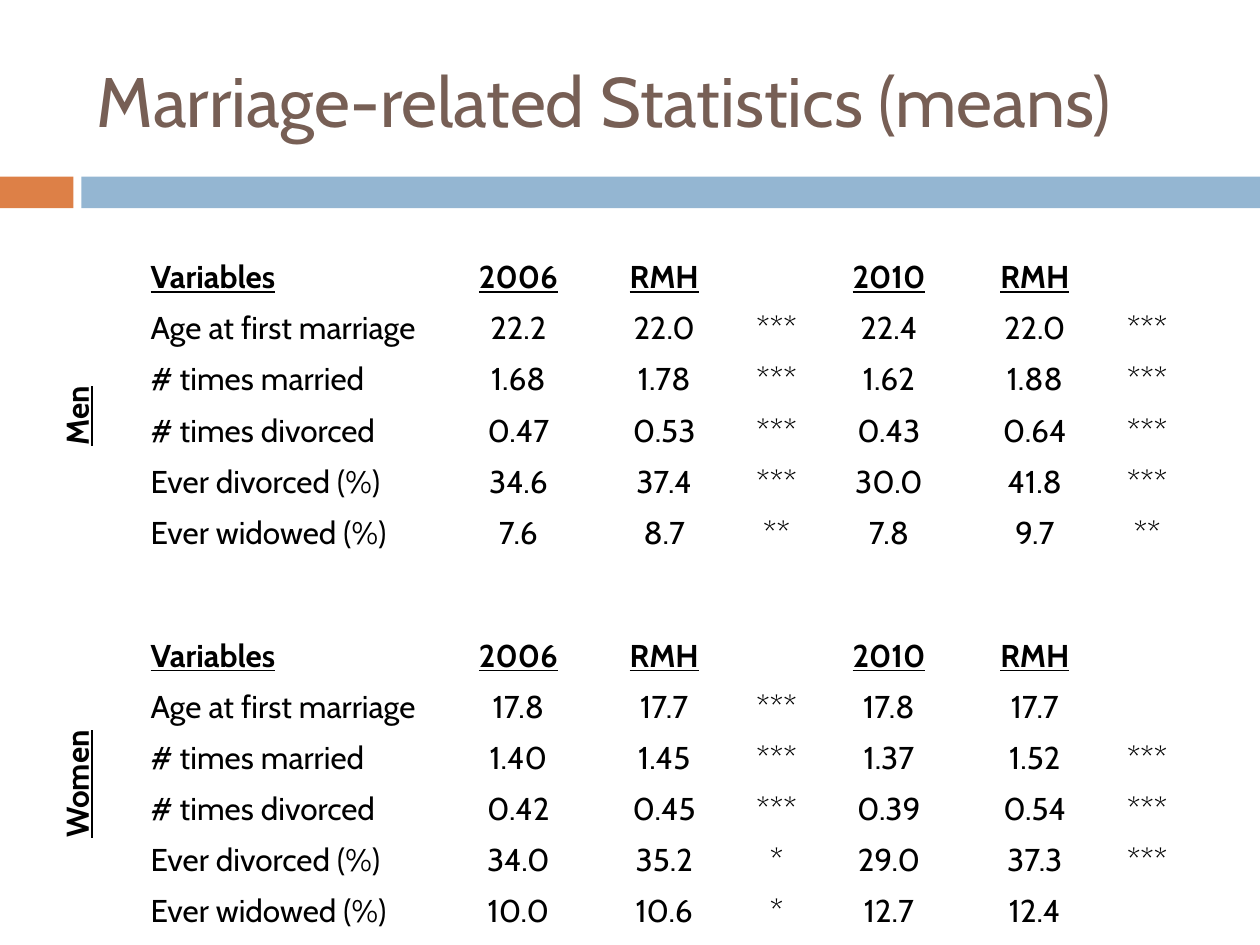
from pptx import Presentation
from pptx.dml.color import RGBColor
from pptx.enum.shapes import MSO_SHAPE
from pptx.enum.text import MSO_ANCHOR, PP_ALIGN
from pptx.util import Cm, Pt

FONT = "Cabin"
HEADER = ["Variables", "2006", "RMH", "", "2010", "RMH", ""]
LABELS = ["Age at first marriage", "# times married", "# times divorced",
          "Ever divorced (%)", "Ever widowed (%)"]
GROUPS = {
    "Men": [
        ["22.2", "22.0", "***", "22.4", "22.0", "***"],
        ["1.68", "1.78", "***", "1.62", "1.88", "***"],
        ["0.47", "0.53", "***", "0.43", "0.64", "***"],
        ["34.6", "37.4", "***", "30.0", "41.8", "***"],
        ["7.6", "8.7", "**", "7.8", "9.7", "**"],
    ],
    "Women": [
        ["17.8", "17.7", "***", "17.8", "17.7", ""],
        ["1.40", "1.45", "***", "1.37", "1.52", "***"],
        ["0.42", "0.45", "***", "0.39", "0.54", "***"],
        ["34.0", "35.2", "*", "29.0", "37.3", "***"],
        ["10.0", "10.6", "*", "12.7", "12.4", ""],
    ],
}
COL_WIDTHS = [1.73, 6.2] + [2.94, 2.94, 1.59] * 2
ROW_HEIGHT = 1.03
BLOCK = len(LABELS) + 1


def rgb(color):
    """Turn a hex string into a colour."""
    return RGBColor.from_string(color)


def style(p, size, color, align=PP_ALIGN.LEFT, strong=False):
    """Set the font and alignment of a paragraph."""
    p.alignment = align
    p.font.name, p.font.size = FONT, Pt(size)
    p.font.color.rgb = rgb(color)
    p.font.bold = p.font.underline = strong


def add_title(s, text, x, y, w, h):
    """Place the slide title, centred vertically in its box."""
    tf = s.shapes.add_textbox(Cm(x), Cm(y), Cm(w), Cm(h)).text_frame
    tf.word_wrap = True
    tf.vertical_anchor = MSO_ANCHOR.MIDDLE
    tf.text = text
    style(tf.paragraphs[0], 40, "775F55")


def add_band(s, x, y, w, h):
    """Draw the two-coloured band with a short block at its left."""
    short, gap = 1.48, 0.16
    start = short + gap
    for dx, width, color in [(0, short, "DD8047"), (start, w - start, "94B6D2")]:
        sp = s.shapes.add_shape(MSO_SHAPE.RECTANGLE, Cm(x + dx), Cm(y), Cm(width), Cm(h))
        sp.shadow.inherit = False
        sp.fill.solid()
        sp.fill.fore_color.rgb = rgb(color)
        sp.line.fill.background()


def fill_cell(cell, text, align=PP_ALIGN.CENTER, strong=False):
    """Write one table cell."""
    cell.text = text
    style(cell.text_frame.paragraphs[0], 18, "000000", align, strong)


def fill_group(table, top, name, values):
    """Write one group: its rotated name, header row and data rows."""
    side = table.cell(top, 0)
    side.merge(table.cell(top + BLOCK - 1, 0))
    fill_cell(side, name, strong=True)
    side.vertical_anchor = MSO_ANCHOR.MIDDLE
    side._tc.get_or_add_tcPr().set("vert", "vert270")
    rows = [HEADER] + [[label] + row for label, row in zip(LABELS, values)]
    for i, row in enumerate(rows):
        for j, text in enumerate(row):
            align = PP_ALIGN.CENTER if j else PP_ALIGN.LEFT
            fill_cell(table.cell(top + i, j + 1), text, align, strong=i == 0)


def add_statistics(s, x, y):
    """Place the table of both groups with an empty row between them."""
    count = 2 * BLOCK + 1
    table = s.shapes.add_table(count, len(COL_WIDTHS), Cm(x), Cm(y),
                               Cm(sum(COL_WIDTHS)), Cm(count * ROW_HEIGHT)).table
    table.first_row = table.horz_banding = False
    for col, width in zip(table.columns, COL_WIDTHS):
        col.width = Cm(width)
    for row in table.rows:
        row.height = Cm(ROW_HEIGHT)
    for cell in table.iter_cells():
        cell.fill.background()
    for k, (name, values) in enumerate(GROUPS.items()):
        fill_group(table, k * (BLOCK + 1), name, values)


def main():
    """Build the slide and save it."""
    prs = Presentation()
    prs.slide_width, prs.slide_height = Cm(25.4), Cm(19.05)
    s = prs.slides.add_slide(prs.slide_layouts[6])
    add_band(s, 0, 3.56, 25.4, 0.64)
    add_title(s, "Marriage-related Statistics (means)", 1.7, 0.64, 22.66, 2.74)
    add_statistics(s, 1.05, 5.08)
    prs.save("out.pptx")


if __name__ == "__main__":
    main()
